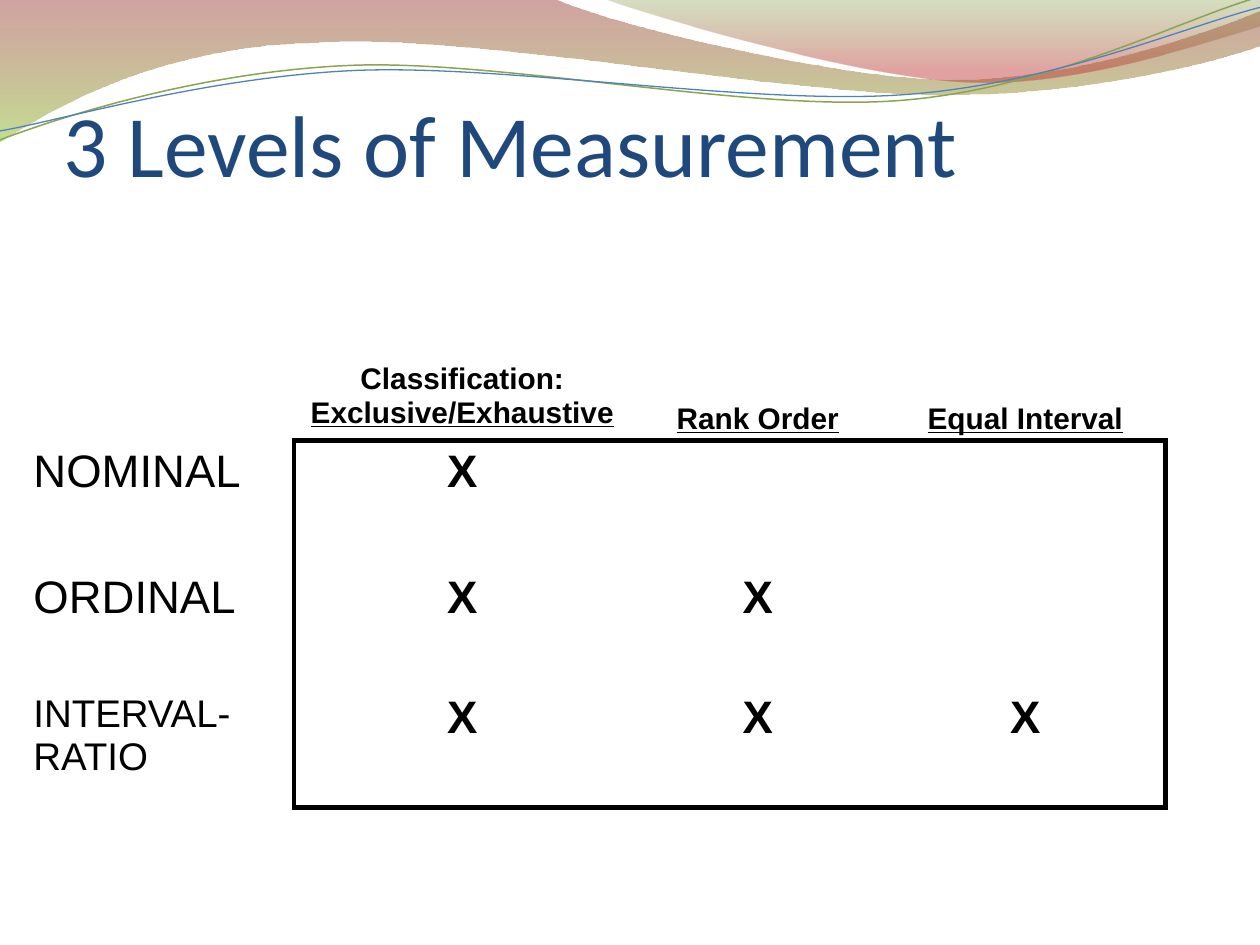
"""Build the slide that compares three levels of measurement."""
from dataclasses import dataclass

from lxml import etree
from pptx import Presentation
from pptx.dml.color import RGBColor
from pptx.enum.text import MSO_ANCHOR, PP_ALIGN
from pptx.oxml.ns import qn
from pptx.util import Cm, Pt

BOTTOM = MSO_ANCHOR.BOTTOM
TOP = MSO_ANCHOR.TOP
CENTER = PP_ALIGN.CENTER
LEFT = PP_ALIGN.LEFT
BLANK_LAYOUT = 6


@dataclass(frozen=True)
class Theme:
    """Hold the fonts, colours and type sizes."""

    title_font: str = "Calibri"
    body_font: str = "Arial"
    title: str = "1F497D"
    ink: str = "000000"
    green_line: str = "89A54F"
    blue_line: str = "4F81BD"
    back_wave: tuple = ((0, "973330", 45), (1, "95C238", 55))
    front_wave: tuple = ((0, "769537", 30), (0.8, "BE3330", 45))
    title_size: int = 50
    header_size: int = 17
    label_size: int = 26
    long_label_size: int = 22
    frame_width: int = 3


THEME = Theme()

BACK_WAVE = [
    [(0, 0)],
    [(11.18, -0.02)],
    [(12.09, 0.43), (16.87, 1.6), (19.25, 1.6)],
    [(21.67, 1.6), (24.33, 0.66), (25.4, 0.23)],
    [(25.43, 0.91)],
    [(24.97, 1.12), (22.1, 1.93), (18.95, 1.91)],
    [(15.8, 1.91), (9.7, 0.71), (6.53, 0.86)],
    [(3.28, 0.91), (1.17, 2.11), (-0.02, 2.87)],
]
FRONT_WAVE = [
    [(12.17, -0.02)],
    [(12.93, 0.28), (17.32, 1.57), (19.53, 1.65)],
    [(21.74, 1.75), (24.41, 0.81), (25.4, 0.53)],
    [(25.4, 0)],
]
GREEN_CURVE = [
    [(0, 2.82)],
    [(1.22, 2.36), (4.01, 1.45), (7.04, 1.32)],
    [(10.03, 1.19), (15.06, 2.26), (18.11, 2.03)],
    [(21.16, 1.8), (23.83, 0.38), (25.35, -0.05)],
]
BLUE_CURVE = [
    [(0, 2.64)],
    [(1.19, 2.44), (4.17, 1.55), (7.19, 1.42)],
    [(10.24, 1.3), (15.16, 2.13), (18.21, 1.91)],
    [(21.23, 1.7), (23.9, 0.53), (25.4, 0.15)],
]

HEADERS = [
    [],
    ["Classification: ", "Exclusive/Exhaustive"],
    ["Rank Order"],
    ["Equal Interval"],
]
LEVELS = ["NOMINAL", "ORDINAL", "INTERVAL-RATIO"]
COLUMN_WIDTHS = [5.51, 6.78, 5.13, 5.66]
ROW_HEIGHTS = [2.53, 2.54, 2.42, 2.44]


def add_outline(page, outline, close):
    """Draw an outline of straight segments and cubic curves."""
    corners = [(Cm(x), Cm(y)) for segment in outline for x, y in segment]
    builder = page.shapes.build_freeform(*corners[0])
    builder.add_line_segments(corners[1:], close=close)
    shape = builder.convert_to_shape()
    shape.shadow.inherit = False
    steps = iter(list(shape.element.iter(qn("a:lnTo"))))
    for segment in outline[1:]:
        lines = [next(steps) for _ in segment]
        if len(lines) == 3:
            curve = etree.Element(qn("a:cubicBezTo"))
            lines[0].addprevious(curve)
            for line in lines:
                curve.append(line[0])
                line.getparent().remove(line)
    return shape


def add_wave(page, outline, stops):
    """Add a wave with a translucent downward gradient."""
    shape = add_outline(page, outline, True)
    shape.line.fill.background()
    shape.fill.gradient()
    shape.fill.gradient_angle = 270
    for stop, (position, color, _) in zip(shape.fill.gradient_stops, stops):
        stop.position = position
        stop.color.rgb = RGBColor.from_string(color)
    colors = shape.element.spPr.iter(qn("a:srgbClr"))
    for color, (_, _, opacity) in zip(colors, stops):
        etree.SubElement(color, qn("a:alpha"), val=str(opacity * 1000))


def add_curve(page, outline, color, width):
    """Add a thin open curve."""
    shape = add_outline(page, outline, False)
    shape.fill.background()
    shape.line.color.rgb = RGBColor.from_string(color)
    shape.line.width = Pt(width)


def style_span(span, font, size, color):
    """Set the font, size and colour of a run."""
    span.font.name = font
    span.font.size = Pt(size)
    span.font.color.rgb = RGBColor.from_string(color)


def add_title(page, text):
    """Add the slide title."""
    box = page.shapes.add_textbox(Cm(1.28), Cm(0.33), Cm(20.96), Cm(3.61))
    frame = box.text_frame
    frame.word_wrap = True
    frame.vertical_anchor = BOTTOM
    frame.margin_left = frame.margin_right = frame.margin_bottom = Cm(0)
    frame.text = text
    style_span(frame.paragraphs[0].runs[0], THEME.title_font, THEME.title_size, THEME.title)


def write_cell(cell, texts, size, bold=False, align=CENTER):
    """Write one paragraph of runs into a table cell."""
    para = cell.text_frame.paragraphs[0]
    para.alignment = align
    for text in texts:
        span = para.add_run()
        span.text = text
        style_span(span, THEME.body_font, size, THEME.ink)
        span.font.bold = bold


def write_header(cell, texts):
    """Write a column heading with its last run underlined."""
    write_cell(cell, texts, THEME.header_size, True)
    cell.vertical_anchor = BOTTOM
    cell.margin_bottom = Cm(0.1 if len(texts) == 1 else 0.22)
    cell.text_frame.paragraphs[0].runs[-1].font.underline = True


def frame_cell(cell, row, column):
    """Draw the edges of the frame around the marks and clear the fill."""
    edges = {
        "a:lnL": row > 0 and column == 1,
        "a:lnR": row > 0 and column in (0, 3),
        "a:lnT": row == 1 and column > 0,
        "a:lnB": row in (0, 3) and column > 0,
    }
    properties = cell._tc.get_or_add_tcPr()
    for tag, visible in edges.items():
        line = etree.SubElement(properties, qn(tag), w=str(Pt(THEME.frame_width)))
        if visible:
            fill = etree.SubElement(line, qn("a:solidFill"))
            etree.SubElement(fill, qn("a:srgbClr"), val=THEME.ink)
        else:
            etree.SubElement(line, qn("a:noFill"))
    cell.fill.background()


def add_levels_table(page):
    """Add the table of levels and their properties."""
    table = page.shapes.add_table(
        len(ROW_HEIGHTS), len(COLUMN_WIDTHS), Cm(0.42), Cm(6.35),
        Cm(sum(COLUMN_WIDTHS)), Cm(sum(ROW_HEIGHTS))).table
    table.first_row = table.horz_banding = False
    for column, width in zip(table.columns, COLUMN_WIDTHS):
        column.width = Cm(width)
    for row, height in zip(table.rows, ROW_HEIGHTS):
        row.height = Cm(height)
    for column, texts in enumerate(HEADERS):
        if texts:
            write_header(table.cell(0, column), texts)
    for row, level in enumerate(LEVELS, 1):
        size = THEME.long_label_size if "-" in level else THEME.label_size
        write_cell(table.cell(row, 0), [level], size, align=LEFT)
        for column in range(1, row + 1):
            write_cell(table.cell(row, column), ["X"], THEME.label_size, True)
    for row in range(len(ROW_HEIGHTS)):
        for column in range(len(COLUMN_WIDTHS)):
            frame_cell(table.cell(row, column), row, column)


def main():
    """Build and save the deck."""
    deck = Presentation()
    deck.slide_width, deck.slide_height = Cm(25.4), Cm(19.05)
    page = deck.slides.add_slide(deck.slide_layouts[BLANK_LAYOUT])
    add_wave(page, BACK_WAVE, THEME.back_wave)
    add_wave(page, FRONT_WAVE, THEME.front_wave)
    add_curve(page, GREEN_CURVE, THEME.green_line, 0.85)
    add_curve(page, BLUE_CURVE, THEME.blue_line, 0.75)
    add_title(page, "3 Levels of Measurement")
    add_levels_table(page)
    deck.save("out.pptx")


if __name__ == "__main__":
    main()
